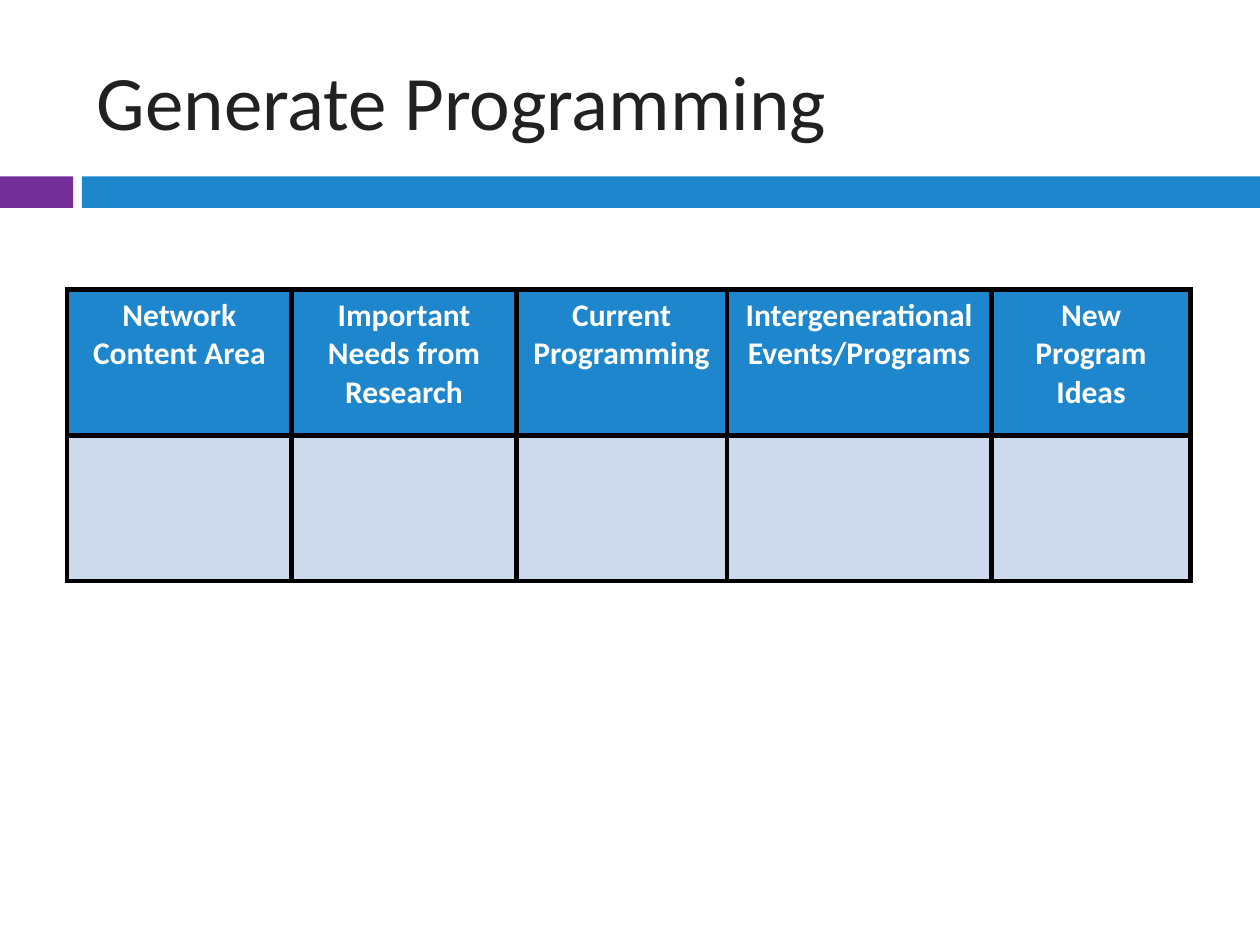
from dataclasses import dataclass

from lxml.etree import SubElement
from pptx import Presentation
from pptx.dml.color import RGBColor
from pptx.enum.shapes import MSO_SHAPE
from pptx.enum.text import MSO_ANCHOR, PP_ALIGN
from pptx.oxml.ns import qn
from pptx.slide import Slide
from pptx.table import _Cell
from pptx.text.text import _Paragraph
from pptx.util import Pt

PURPLE = RGBColor(0x73, 0x2E, 0x9A)
BLUE = RGBColor(0x1D, 0x86, 0xCD)
PALE_BLUE = RGBColor(0xCD, 0xD9, 0xED)
INK = RGBColor(0x21, 0x21, 0x21)
WHITE = RGBColor(0xFF, 0xFF, 0xFF)
BLACK = RGBColor(0, 0, 0)
FONT = "Calibri"
BORDER_WIDTH = 3
ROW_HEIGHT = 83.2


@dataclass(frozen=True)
class Band:
    left: float
    width: float
    color: RGBColor


@dataclass(frozen=True)
class Column:
    heading: str
    width: float


BANDS = [Band(0, 41.8, PURPLE), Band(46.8, 673.2, BLUE)]
COLUMNS = [
    Column("Network Content Area", 128.4),
    Column("Important Needs from Research", 128.4),
    Column("Current Programming", 120.3),
    Column("Intergenerational Events/Programs", 151.2),
    Column("New Program Ideas", 113.9),
]


def add_text(para: _Paragraph, text: str, size: float, color: RGBColor, bold: bool) -> None:
    span = para.add_run()
    span.text = text
    span.font.name = FONT
    span.font.size = Pt(size)
    span.font.bold = bold
    span.font.color.rgb = color


def add_band(page: Slide, band: Band) -> None:
    box = page.shapes.add_shape(
        MSO_SHAPE.RECTANGLE, Pt(band.left), Pt(100.8), Pt(band.width), Pt(18)
    )
    box.shadow.inherit = False
    box.fill.solid()
    box.fill.fore_color.rgb = band.color
    box.line.fill.background()


def set_title(page: Slide, text: str) -> None:
    title = page.shapes.title
    title.left, title.top = Pt(48.2), Pt(18)
    title.width, title.height = Pt(642.2), Pt(77.8)
    title.text_frame.vertical_anchor = MSO_ANCHOR.MIDDLE
    para = title.text_frame.paragraphs[0]
    para.alignment = PP_ALIGN.LEFT
    add_text(para, text, 44, INK, False)


def style_cell(cell: _Cell, color: RGBColor) -> None:
    properties = cell._tc.get_or_add_tcPr()
    for side in ("lnL", "lnR", "lnT", "lnB"):
        line = SubElement(properties, qn(f"a:{side}"), w=str(Pt(BORDER_WIDTH)))
        fill = SubElement(line, qn("a:solidFill"))
        SubElement(fill, qn("a:srgbClr"), val=str(BLACK))
    cell.fill.solid()
    cell.fill.fore_color.rgb = color


def add_program_table(page: Slide, columns: list[Column]) -> None:
    width = sum(column.width for column in columns)
    table = page.shapes.add_table(
        2, len(columns), Pt(38.3), Pt(165.6), Pt(width), Pt(2 * ROW_HEIGHT)
    ).table
    for row in table.rows:
        row.height = Pt(ROW_HEIGHT)
    for index, column in enumerate(columns):
        table.columns[index].width = Pt(column.width)
        heading = table.cell(0, index)
        style_cell(heading, BLUE)
        style_cell(table.cell(1, index), PALE_BLUE)
        para = heading.text_frame.paragraphs[0]
        para.alignment = PP_ALIGN.CENTER
        add_text(para, column.heading, 18, WHITE, True)


def main() -> None:
    deck = Presentation()
    deck.slide_width, deck.slide_height = Pt(720), Pt(540)
    page = deck.slides.add_slide(deck.slide_layouts[5])
    for band in BANDS:
        add_band(page, band)
    set_title(page, "Generate Programming")
    add_program_table(page, COLUMNS)
    deck.save("out.pptx")


if __name__ == "__main__":
    main()
